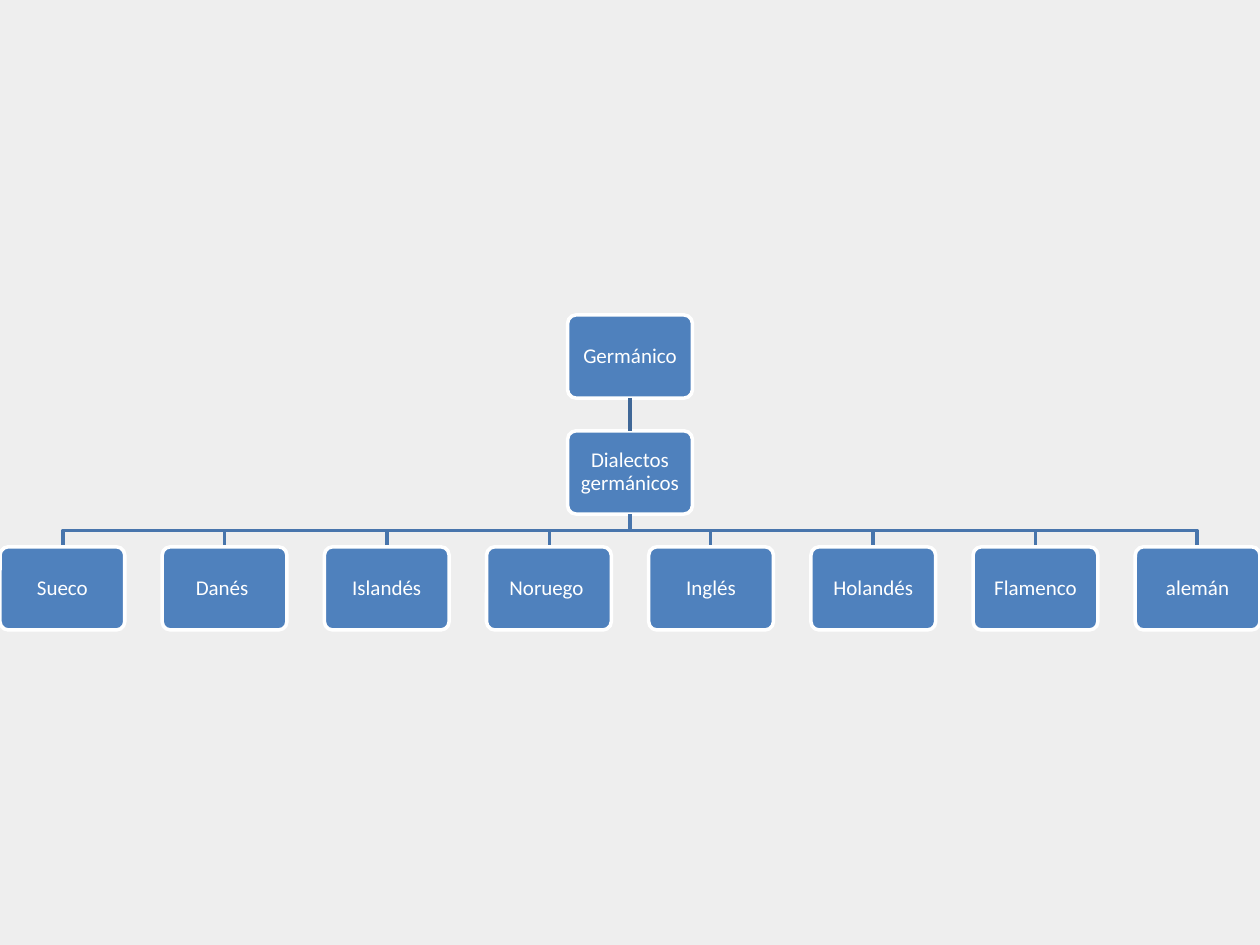
from lxml import etree
from pptx import Presentation
from pptx import util as u
from pptx.dml.color import RGBColor
from pptx.enum import shapes, text
from pptx.oxml import ns

PX = 9144
WIDE, HIGH = 1000, 750
BOX_W, BOX_H, GAP = 99, 66, 26

BACK = RGBColor(0xEE, 0xEE, 0xEE)
BLUE = RGBColor(0x4F, 0x81, 0xBD)
WHITE = RGBColor(0xFF, 0xFF, 0xFF)
STEM = RGBColor(0x3F, 0x67, 0x97)
BRANCH = RGBColor(0x48, 0x75, 0xAC)

ROOT = "Germánico"
GROUP = "Dialectos germánicos"
LEAVES = ["Sueco", "Danés ", "Islandés", "Noruego ",
          "Inglés", "Holandés", "Flamenco", "alemán"]


def px(n):
    return u.Emu(round(n * PX))


def set_line(item, color):
    item.line.color.rgb = color
    item.line.width = u.Pt(2)


def add_node(slide, label, left, top):
    node = slide.shapes.add_shape(
        shapes.MSO_SHAPE.ROUNDED_RECTANGLE,
        px(left), px(top), px(BOX_W), px(BOX_H))
    node.adjustments[0] = 0.1
    node.shadow.inherit = False
    node.fill.solid()
    node.fill.fore_color.rgb = BLUE
    set_line(node, WHITE)

    frame = node.text_frame
    frame.text = label
    frame.word_wrap = True
    frame.vertical_anchor = text.MSO_ANCHOR.MIDDLE
    frame.margin_left = frame.margin_right = px(5)
    frame.margin_top = frame.margin_bottom = px(5)
    para = frame.paragraphs[0]
    para.alignment = text.PP_ALIGN.CENTER
    para.line_spacing = 0.9
    para.font.name = "Calibri"
    para.font.size = u.Pt(12)
    para.font.color.rgb = WHITE
    return node


def add_stem(slide, upper, lower):
    stem = slide.shapes.add_connector(shapes.MSO_CONNECTOR.STRAIGHT, 0, 0, 0, 0)
    stem.begin_connect(upper, 2)
    stem.end_connect(lower, 0)
    set_line(stem, STEM)
    etree.SubElement(stem._element.spPr, ns.qn("a:effectLst"))


def add_branch(slide, start, end, top):
    bend = top + GAP / 2
    build = slide.shapes.build_freeform(start, top, scale=PX)
    build.add_line_segments(
        [(start, bend), (end, bend), (end, top + GAP)], close=False)
    branch = build.convert_to_shape()
    branch.shadow.inherit = False
    branch.fill.background()
    set_line(branch, BRANCH)


def add_tree(slide, left, top, width):
    step = BOX_H + GAP
    mid = left + width / 2
    root = add_node(slide, ROOT, mid - BOX_W / 2, top)
    group = add_node(slide, GROUP, mid - BOX_W / 2, top + step)
    add_stem(slide, root, group)

    pitch = (width - BOX_W) / (len(LEAVES) - 1)
    for i, label in enumerate(LEAVES):
        x = left + i * pitch
        add_branch(slide, mid, x + BOX_W / 2, top + step + BOX_H)
        add_node(slide, label, x, top + 2 * step)


def main():
    deck = Presentation()
    deck.slide_width, deck.slide_height = px(WIDE), px(HIGH)
    slide = deck.slides.add_slide(deck.slide_layouts[6])
    slide.background.fill.solid()
    slide.background.fill.fore_color.rgb = BACK
    add_tree(slide, 0, 250, WIDE)
    deck.save("out.pptx")


if __name__ == "__main__":
    main()
